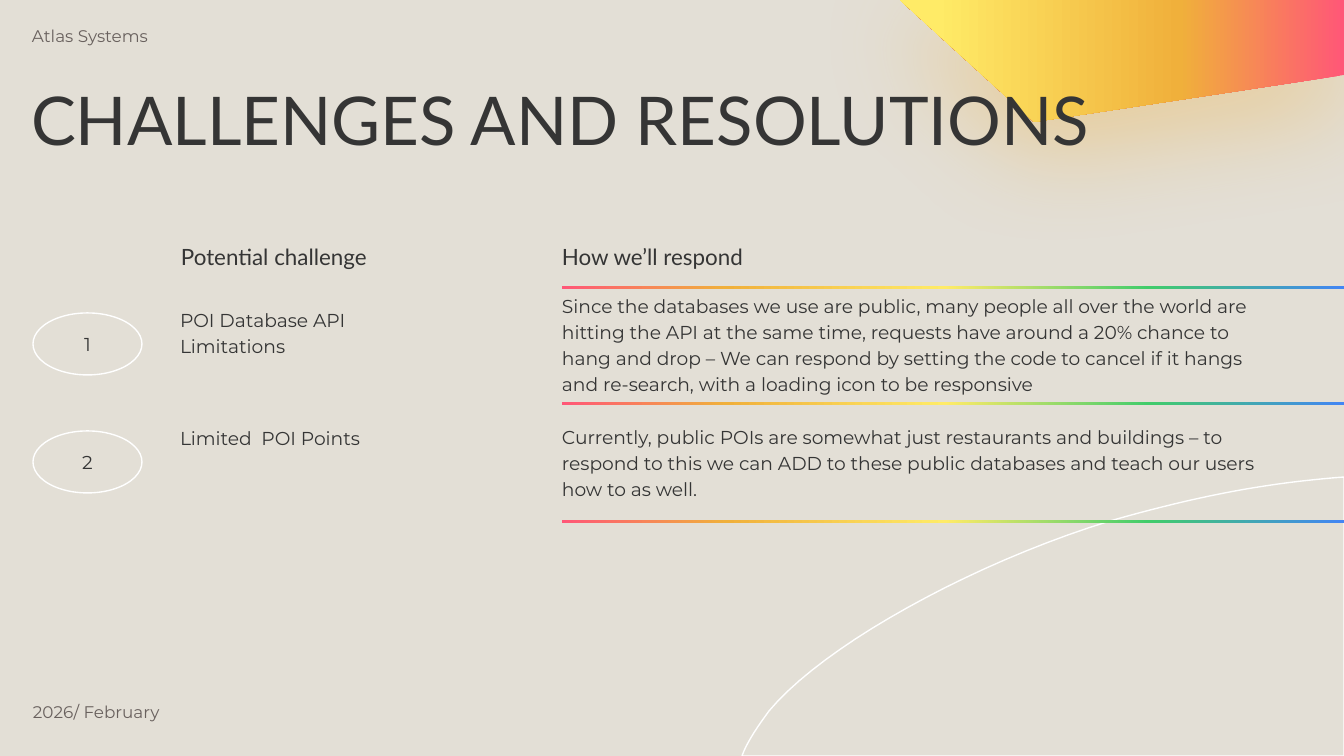
from lxml import etree
from pptx import Presentation
from pptx.dml.color import RGBColor
from pptx.enum.shapes import MSO_SHAPE
from pptx.enum.text import MSO_ANCHOR, MSO_AUTO_SIZE, PP_ALIGN
from pptx.oxml.ns import qn
from pptx.util import Emu, Pt

OVAL, RECTANGLE = MSO_SHAPE.OVAL, MSO_SHAPE.RECTANGLE
TOP, MIDDLE, BOTTOM = MSO_ANCHOR.TOP, MSO_ANCHOR.MIDDLE, MSO_ANCHOR.BOTTOM
LEFT, CENTER = PP_ALIGN.LEFT, PP_ALIGN.CENTER
NO_AUTOFIT = MSO_AUTO_SIZE.NONE

SCALE = 914400 / 134.4
WIDTH, HEIGHT = 1344, 756
HEADING_FONT, BODY_FONT = "Lato", "Montserrat"
COLORS = {
    "background": "E3DFD6", "text": "353535", "muted": "69615E", "white": "FFFFFF",
    "pink": "FF5777", "orange": "F0B03B", "yellow": "FFEB67",
    "green": "41CC6B", "blue": "4285F4",
}
RAINBOW = [(0, "pink"), (21, "orange"), (49, "yellow"), (75, "green"), (100, "blue")]
SUNSET = [(0, "pink"), (37, "orange"), (92, "yellow"), (100, "yellow")]
CURVES = [
    [(1344, 477), (1267, 483), (1201, 495), (1110, 521)],
    [(1110, 521), (970, 564), (823, 646), (769, 711)],
    [(769, 711), (758, 726), (747, 742), (742, 756)],
]
CURVE_STEPS = 20
ROW_PITCH = 118
ROWS = [
    ("1", "POI Database API Limitations",
     "Since the databases we use are public, many people all over the world are "
     "hitting the API at the same time, requests have around a 20% chance to hang "
     "and drop – We can respond by setting the code to cancel if it hangs and "
     "re-search, with a loading icon to be responsive"),
    ("2", "Limited  POI Points",
     "Currently, public POIs are somewhat just restaurants and buildings – to "
     "respond to this we can ADD to these public databases and teach our users "
     "how to as well."),
]


def px(value):
    return Emu(round(value * SCALE))


def rgb(name):
    return RGBColor.from_string(COLORS[name])


def write(shape, text, size, font=BODY_FONT, color="text", anchor=TOP,
          align=LEFT, spacing=1.0, insets=(0, 0, 0, 0)):
    frame = shape.text_frame
    frame.word_wrap = True
    frame.auto_size = NO_AUTOFIT
    frame.vertical_anchor = anchor
    frame.margin_left, frame.margin_top, frame.margin_right, frame.margin_bottom = map(px, insets)
    paragraph = frame.paragraphs[0]
    paragraph.alignment = align
    paragraph.line_spacing = spacing
    run = paragraph.add_run()
    run.text = text
    run.font.size = Pt(size)
    run.font.name = font
    run.font.color.rgb = rgb(color)


def add_text(slide, box, text, size, **style):
    write(slide.shapes.add_textbox(*map(px, box)), text, size, **style)


def set_gradient(shape, stops, angle):
    shape.fill.gradient()
    shape.fill.gradient_angle = angle
    stop_list = shape._element.spPr.find(qn("a:gradFill")).find(qn("a:gsLst"))
    for stop in list(stop_list):
        stop_list.remove(stop)
    for position, color in stops:
        stop = etree.SubElement(stop_list, qn("a:gs"), pos=str(position * 1000))
        etree.SubElement(stop, qn("a:srgbClr"), val=COLORS[color])


def set_glow(shape):
    effects = shape._element.spPr.find(qn("a:effectLst"))
    shadow = etree.SubElement(
        effects, qn("a:outerShdw"), blurRad=str(Pt(55.1)), dist=str(Pt(17.2)),
        dir=str(95 * 60000), algn="bl", rotWithShape="0")
    color = etree.SubElement(shadow, qn("a:srgbClr"), val=COLORS["orange"])
    etree.SubElement(color, qn("a:alpha"), val="40000")


def add_outline(slide, points):
    start, *others = [(px(x), px(y)) for x, y in points]
    builder = slide.shapes.build_freeform(*start)
    builder.add_line_segments(others, close=True)
    shape = builder.convert_to_shape()
    shape.shadow.inherit = False
    return shape


def set_white_line(shape):
    shape.fill.background()
    shape.line.color.rgb = rgb("white")
    shape.line.width = Pt(0.75)


def bezier_point(controls, t):
    weights = ((1 - t) ** 3, 3 * t * (1 - t) ** 2, 3 * t ** 2 * (1 - t), t ** 3)
    return tuple(sum(w * c for w, c in zip(weights, axis)) for axis in zip(*controls))


def add_decoration(slide):
    arc = [CURVES[0][0]]
    for controls in CURVES:
        arc += [bezier_point(controls, step / CURVE_STEPS) for step in range(1, CURVE_STEPS + 1)]
    set_white_line(add_outline(slide, arc + [(WIDTH, HEIGHT)]))

    wedge = add_outline(slide, [(900, 0), (1034, 122), (WIDTH, 75), (WIDTH, 0)])
    set_gradient(wedge, SUNSET, 180)
    wedge.line.fill.background()
    set_glow(wedge)


def add_title(slide, box):
    title = slide.shapes.title
    title.left, title.top, title.width, title.height = map(px, box)
    write(title, "CHALLENGES AND RESOLUTIONS", 36, font=HEADING_FONT,
          spacing=0.9, insets=(13, 13, 13, 13))
    slide.shapes._spTree.append(title._element)


def add_rule(slide, left, top):
    rule = slide.shapes.add_shape(RECTANGLE, px(left), px(top), px(WIDTH - left), px(3))
    rule.shadow.inherit = False
    rule.line.fill.background()
    set_gradient(rule, RAINBOW, 0)


def add_headings(slide, left, top):
    style = {"font": HEADING_FONT, "anchor": BOTTOM, "spacing": 1.15}
    add_text(slide, (left + 135, top, 323, 59), "Potential challenge", 12,
             insets=(13, 13, 13, 13), **style)
    add_text(slide, (left + 529, top, 323, 59), "How we’ll respond", 12,
             insets=(0, 13, 13, 13), **style)
    add_rule(slide, left + 529, top + 62)


def add_row(slide, left, top, number, challenge, response):
    badge = slide.shapes.add_shape(OVAL, px(left), px(top + 20), px(109), px(62))
    badge.shadow.inherit = False
    set_white_line(badge)
    write(badge, number, 10, anchor=MIDDLE, align=CENTER)
    add_text(slide, (left + 134, top, 297, 101), challenge, 10,
             spacing=1.15, insets=(13, 13, 13, 13))
    add_text(slide, (left + 529, top, 726, 101), response, 10,
             anchor=MIDDLE, spacing=1.15, insets=(0, 13, 13, 13))
    add_rule(slide, left + 529, top + 109)


def main():
    presentation = Presentation()
    presentation.slide_width, presentation.slide_height = px(WIDTH), px(HEIGHT)
    slide = presentation.slides.add_slide(presentation.slide_layouts[5])
    slide.background.fill.solid()
    slide.background.fill.fore_color.rgb = rgb("background")

    add_decoration(slide)
    add_text(slide, (5, 13, 233, 28), "Atlas Systems", 9, color="muted", insets=(27, 13, 13, 13))
    add_title(slide, (18, 74, 1169, 101))
    add_headings(slide, 33, 224)
    for index, row in enumerate(ROWS):
        add_row(slide, 33, 293 + index * ROW_PITCH, *row)
    add_text(slide, (33, 702, 285, 28), "2026/ February", 9, color="muted")
    presentation.save("out.pptx")


if __name__ == "__main__":
    main()
